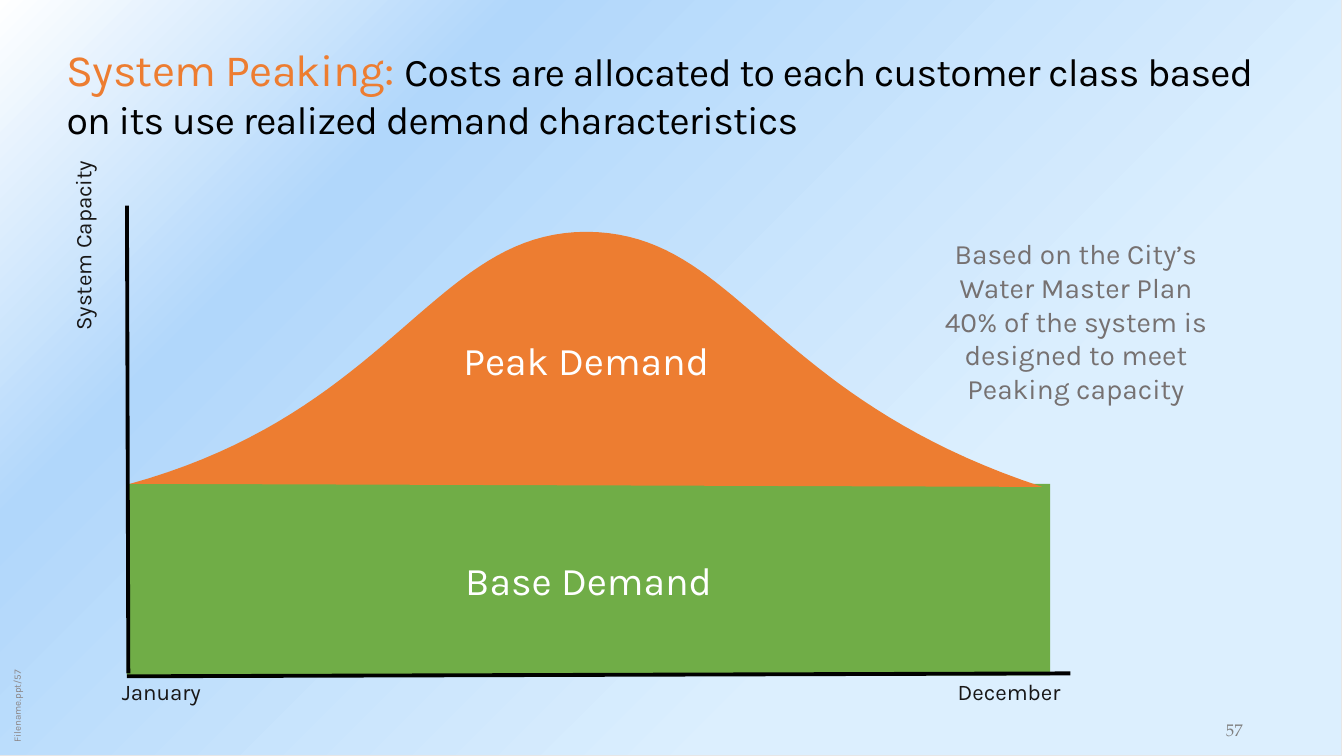
import pptx
import pptx.util
import pptx.dml.color
import pptx.enum.shapes
import pptx.enum.text
import pptx.oxml
import pptx.oxml.ns
import lxml.etree

Pt = pptx.util.Pt
RGBColor = pptx.dml.color.RGBColor
PP_ALIGN = pptx.enum.text.PP_ALIGN
MSO_ANCHOR = pptx.enum.text.MSO_ANCHOR
MSO_SHAPE = pptx.enum.shapes.MSO_SHAPE

ORANGE = RGBColor(0xED, 0x7D, 0x31)
GREEN = RGBColor(0x70, 0xAD, 0x47)
BLACK = RGBColor(0x00, 0x00, 0x00)
WHITE = RGBColor(0xFF, 0xFF, 0xFF)
LABEL = RGBColor(0x18, 0x17, 0x17)
NOTE_GRAY = RGBColor(0x76, 0x71, 0x71)
FILE_GRAY = RGBColor(0x8B, 0x85, 0x85)
NUMBER_GRAY = RGBColor(0x80, 0x80, 0x80)
EDGE_GRAY = RGBColor(0xE7, 0xE6, 0xE6)
SKY_PALE = RGBColor(0xDC, 0xEF, 0xFE)
SKY_BLUE = RGBColor(0xB1, 0xD7, 0xFB)


def add_text(frame, text, size=16, color=LABEL, font="Karla", align=PP_ALIGN.LEFT,
             anchor=MSO_ANCHOR.TOP, spacing=None):
    frame.word_wrap = True
    frame.vertical_anchor = anchor
    paragraph = frame.paragraphs[0]
    paragraph.alignment = align
    run = paragraph.add_run()
    run.text = text
    run.font.name = font
    run.font.size = Pt(size)
    run.font.color.rgb = color
    if spacing is not None:
        run._r.get_or_add_rPr().set("spc", str(spacing))


def style_area(shape, color):
    shape.shadow.inherit = False
    shape.fill.solid()
    shape.fill.fore_color.rgb = color
    shape.line.fill.background()


presentation = pptx.Presentation()
presentation.slide_width = Pt(960)
presentation.slide_height = Pt(540)
slide = presentation.slides.add_slide(presentation.slide_layouts[5])
shapes = slide.shapes

backdrop = shapes.add_shape(MSO_SHAPE.RECTANGLE, Pt(-1.5), Pt(0), Pt(960), Pt(540))
backdrop.shadow.inherit = False
backdrop.line.color.rgb = EDGE_GRAY
backdrop.line.width = Pt(0.75)
backdrop.fill.background()
stops = "".join(
    f'<a:gs pos="{position * 1000}"><a:srgbClr val="{color}"/></a:gs>'
    for position, color in [(30, SKY_PALE), (75, SKY_BLUE), (100, WHITE)]
)
gradient = pptx.oxml.parse_xml(
    f'<a:gradFill {pptx.oxml.ns.nsdecls("a")} rotWithShape="1"><a:gsLst>{stops}</a:gsLst>'
    '<a:path path="circle"><a:fillToRect l="100000" t="100000"/></a:path></a:gradFill>'
)
properties = backdrop._element.spPr
properties.replace(properties.find(pptx.oxml.ns.qn("a:noFill")), gradient)
shapes._spTree.remove(backdrop._element)
shapes._spTree.insert(2, backdrop._element)

title = shapes.title
title.left, title.top, title.width, title.height = Pt(40.3), Pt(23.8), Pt(880), Pt(84)
for text, size, color in [
    ("System Peaking: ", 32, ORANGE),
    ("Costs are allocated to each customer class based on its use realized demand characteristics",
     28, BLACK),
]:
    add_text(title.text_frame, text, size=size, color=color, anchor=MSO_ANCHOR.MIDDLE, spacing=-50)

base_area = shapes.add_shape(MSO_SHAPE.RECTANGLE, Pt(90.7), Pt(345.6), Pt(659.5), Pt(136.8))

CURVE_STEPS = 40
curves = [
    [(92.9, 345.6), (280.8, 293.8), (310.3, 165.6), (419, 165.6)],
    [(419, 165.6), (527, 166.3), (547.2, 283), (744.5, 347.8)],
]
points = []
for start, first, second, end in curves:
    for step in range(1, CURVE_STEPS + 1):
        t = step / CURVE_STEPS
        weights = [(1 - t) ** 3, 3 * t * (1 - t) ** 2, 3 * t ** 2 * (1 - t), t ** 3]
        points.append(tuple(
            Pt(sum(weight * point[axis]
                   for weight, point in zip(weights, (start, first, second, end))))
            for axis in (0, 1)
        ))
outline = shapes.build_freeform(Pt(92.9), Pt(345.6))
outline.add_line_segments(points, close=True)
peak_area = outline.convert_to_shape()

for area, color, text in [(base_area, GREEN, "Base Demand"), (peak_area, ORANGE, "Peak Demand")]:
    style_area(area, color)
    add_text(area.text_frame, text, size=28, color=WHITE, align=PP_ALIGN.CENTER,
             anchor=MSO_ANCHOR.MIDDLE)

for x1, y1, x2, y2 in [(90.7, 146.9, 91.7, 481), (764.6, 481, 90.7, 483.1)]:
    axis_line = shapes.add_connector(pptx.enum.shapes.MSO_CONNECTOR.STRAIGHT,
                                     Pt(x1), Pt(y1), Pt(x2), Pt(y2))
    axis_line.line.color.rgb = BLACK
    axis_line.line.width = Pt(2.75)
    lxml.etree.SubElement(axis_line._element.spPr, pptx.oxml.ns.qn("a:effectLst"))

small = {"anchor": MSO_ANCHOR.BOTTOM}
for text, left, top, width, height, rotation, inset, options in [
    ("System Capacity", -79.9, 233.3, 278, 26.6, 270, 7.2, {"align": PP_ALIGN.RIGHT}),
    ("January", 79.9, 481, 209.5, 26.6, 0, 7.2, {}),
    ("December", 622.8, 481, 141.8, 26.6, 0, 7.2, {"align": PP_ALIGN.RIGHT}),
    ("Based on the City’s Water Master Plan 40% of the system is designed to meet Peaking capacity",
     664.6, 165.6, 208, 128.2, 0, 7.2,
     {"size": 20, "color": NOTE_GRAY, "align": PP_ALIGN.CENTER}),
    ("Filename.ppt/57", -84.2, 429.8, 192.2, 15.8, 270, 3.6,
     {"size": 7, "color": FILE_GRAY, **small}),
    ("57", 848.9, 510.5, 65.5, 21.6, 0, 3.6,
     {"size": 12, "color": NUMBER_GRAY, "font": "TeX Gyre Pagella", "align": PP_ALIGN.CENTER,
      **small}),
]:
    box = shapes.add_textbox(Pt(left), Pt(top), Pt(width), Pt(height))
    box.rotation = rotation
    box.text_frame.margin_left = box.text_frame.margin_right = Pt(inset)
    add_text(box.text_frame, text, **options)

presentation.save("out.pptx")
